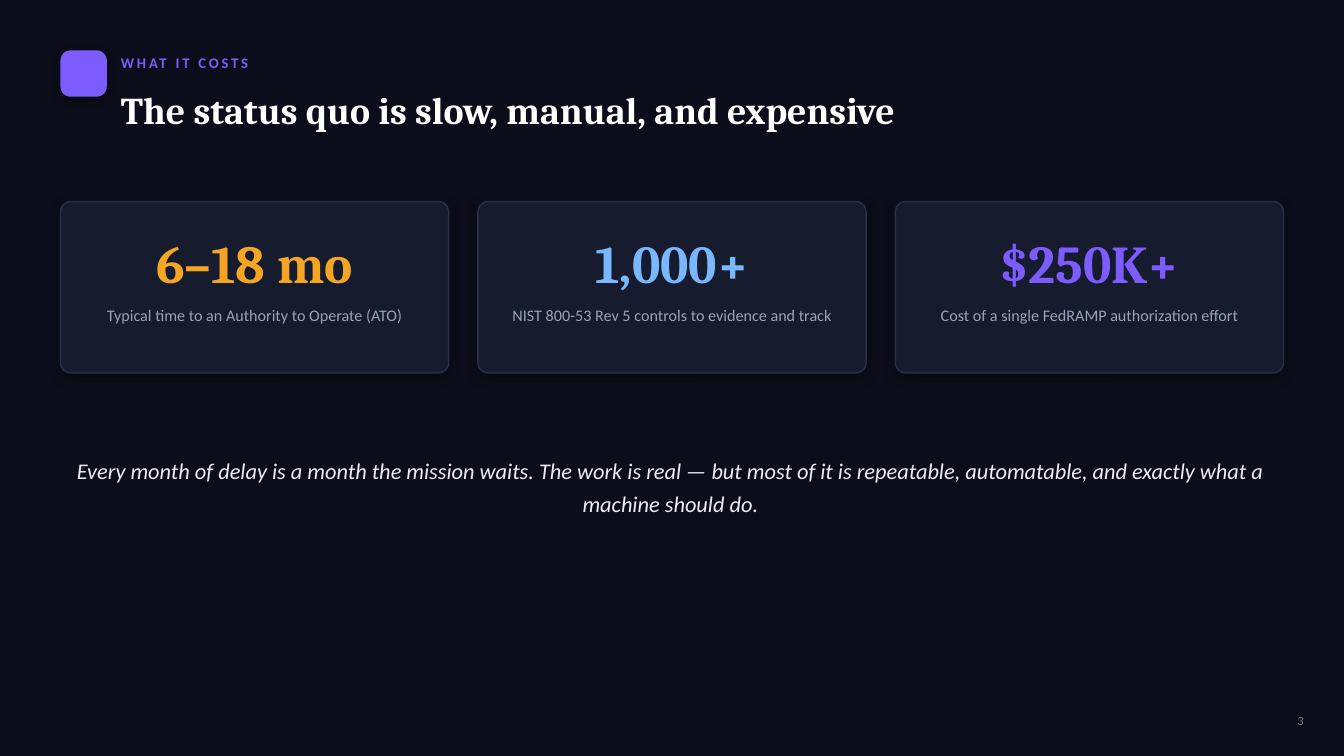
from lxml import etree
from pptx import Presentation
from pptx import util as u
from pptx.dml import color
from pptx.enum import shapes, text
from pptx.oxml import ns

KICK = "WHAT IT COSTS"
TITLE = "The status quo is slow, manual, and expensive"
CARDS = [
    ("6–18 mo", "Typical time to an Authority to Operate (ATO)", "F5A524"),
    ("1,000+", "NIST 800-53 Rev 5 controls to evidence and track", "79B8FF"),
    ("$250K+", "Cost of a single FedRAMP authorization effort", "7C5CFF"),
]
CLOSE = ("Every month of delay is a month the mission waits. "
         "The work is real — but most of it is repeatable, automatable, "
         "and exactly what a machine should do.")
PAGE = "3"
LEFT, TOP, WIDE, HIGH, STEP = 0.6, 2, 3.85, 1.7, 4.14
MID = text.MSO_ANCHOR.MIDDLE
ALIGN = text.PP_ALIGN


def rgb(code):
    return color.RGBColor.from_string(code)


def shade(shape, alpha, blur, dist):
    shape.shadow.inherit = False
    group = shape._element.spPr.find(ns.qn("a:effectLst"))
    outer = etree.SubElement(group, ns.qn("a:outerShdw"), blurRad=str(u.Pt(blur)),
                             dist=str(u.Pt(dist)), dir="5400000",
                             algn="ctr", rotWithShape="0")
    tint = etree.SubElement(outer, ns.qn("a:srgbClr"), val="000000")
    etree.SubElement(tint, ns.qn("a:alpha"), val=str(alpha * 1000))


def panel(slide, box, round_by, fill, shadow, line=None):
    shape = slide.shapes.add_shape(shapes.MSO_SHAPE.ROUNDED_RECTANGLE,
                                   *map(u.Inches, box))
    shape.adjustments[0] = round_by
    shape.fill.solid()
    shape.fill.fore_color.rgb = rgb(fill)
    if line:
        shape.line.color.rgb = rgb(line)
        shape.line.width = u.Pt(1)
    else:
        shape.line.fill.background()
    shade(shape, *shadow)


def write(slide, box, words, size, tone, font="Calibri", bold=False,
          slant=False, align=ALIGN.LEFT, anchor=MID, lead=None, track=None):
    frame = slide.shapes.add_textbox(*map(u.Inches, box)).text_frame
    frame.word_wrap = True
    frame.margin_left = frame.margin_right = 0
    frame.margin_top = frame.margin_bottom = 0
    frame.vertical_anchor = anchor
    frame.text = words
    para = frame.paragraphs[0]
    para.alignment = align
    if lead:
        para.line_spacing = lead
    run = para.runs[0]
    run.font.name = font
    run.font.size = u.Pt(size)
    run.font.bold = bold
    run.font.italic = slant
    run.font.color.rgb = rgb(tone)
    if track:
        run.font._element.set("spc", str(track * 100))


def main():
    deck = Presentation()
    deck.slide_width, deck.slide_height = u.Inches(13.33), u.Inches(7.5)
    slide = deck.slides.add_slide(deck.slide_layouts[6])
    slide.background.fill.solid()
    slide.background.fill.fore_color.rgb = rgb("0B0E1A")

    panel(slide, (LEFT, 0.5, 0.46, 0.46), 0.22, "7C5CFF", (40, 7, 2))
    write(slide, (1.2, 0.5, 10, 0.25), KICK, 10.5, "7C5CFF", bold=True, track=2)
    write(slide, (1.2, 0.74, 11.5, 0.7), TITLE, 27, "FFFFFF", "Cambria", True)

    for i, (stat, note, tone) in enumerate(CARDS):
        x = LEFT + i * STEP
        panel(slide, (x, TOP, WIDE, HIGH), 0.06, "161B2E", (35, 9, 3), "2A3147")
        write(slide, (x + 0.05, TOP + 0.18, WIDE - 0.1, 0.85), stat, 38, tone,
              "Cambria", True, align=ALIGN.CENTER)
        write(slide, (x + 0.18, TOP + 1.02, WIDE - 0.36, 0.6), note, 11.5, "9AA3B8",
              align=ALIGN.CENTER, anchor=text.MSO_ANCHOR.TOP, lead=1.05)

    write(slide, (LEFT, 4.2, 12.1, 1.2), CLOSE, 16, "EAEDF5", slant=True,
          align=ALIGN.CENTER, lead=1.25)
    write(slide, (12.53, 7, 0.4, 0.3), PAGE, 9, "6B7488", align=ALIGN.RIGHT)
    deck.save("out.pptx")


if __name__ == "__main__":
    main()
